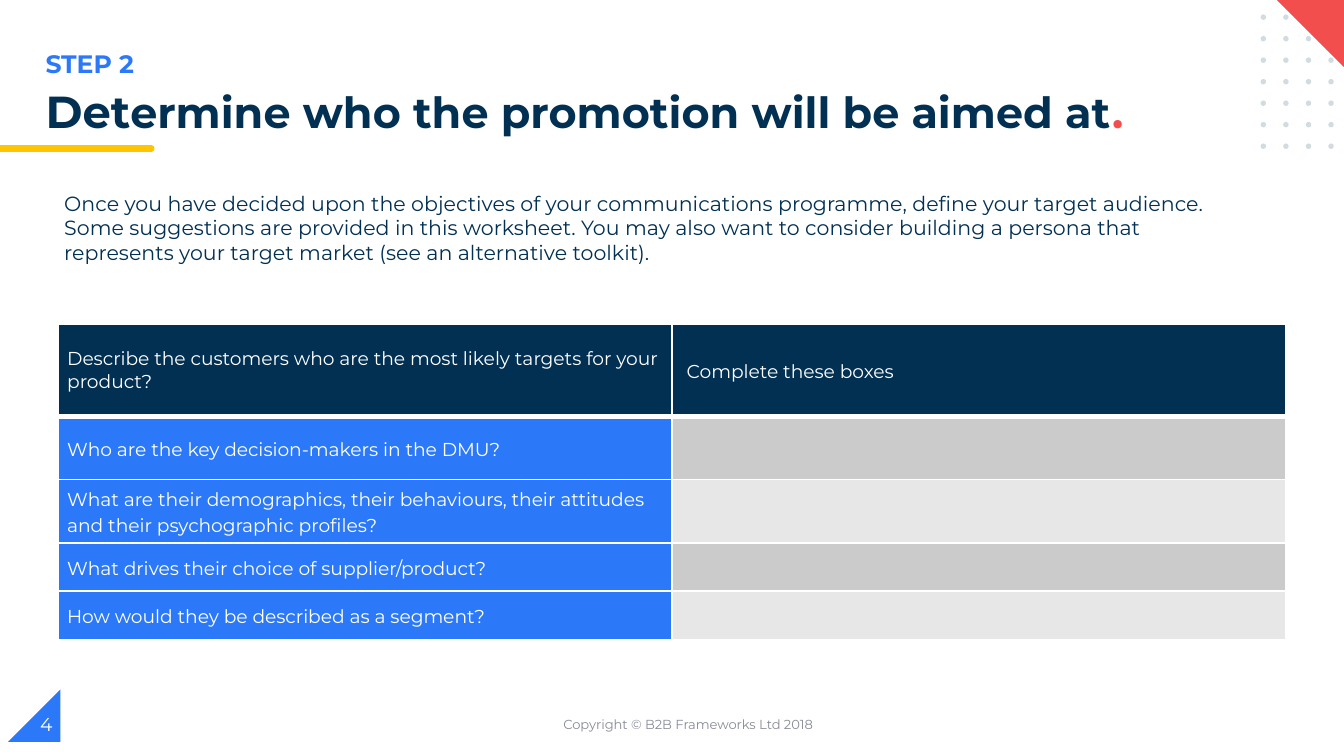
from dataclasses import dataclass

from pptx import Presentation
from pptx import util as u
from pptx.dml import color
from pptx.enum import shapes, text
from pptx.oxml import ns, xmlchemy

COLUMNS, ROWS = 100, 56.25  # grid of tenth-inch squares


@dataclass(frozen=True)
class Theme:
    font: str = "Montserrat"
    navy: str = "023053"
    blue: str = "2B79F8"
    red: str = "F24E4E"
    yellow: str = "FFC600"
    white: str = "FFFFFF"
    dot: str = "D1DBE0"
    muted: str = "888C97"
    bands: tuple = ("CBCBCB", "E7E7E7")
    step: float = 13.5
    title_first: float = 24
    title: float = 23
    body: float = 11
    cell: float = 10
    footer: float = 7


class Worksheet:
    def __init__(self, theme):
        self.theme = theme
        self.deck = Presentation()
        self.deck.slide_width, self.deck.slide_height = u.Inches(10), u.Inches(5.625)
        self.page = self.deck.slides.add_slide(self.deck.slide_layouts[6])

    def across(self, columns):
        return round(self.deck.slide_width * columns / COLUMNS)

    def down(self, rows):
        return round(self.deck.slide_height * rows / ROWS)

    def area(self, left, top, width, height):
        return self.across(left), self.down(top), self.across(width), self.down(height)

    def shape(self, kind, place, fill, rotation=0, mirrored=False):
        shape = self.page.shapes.add_shape(kind, *self.area(*place))
        shape.shadow.inherit = False
        shape.fill.solid()
        shape.fill.fore_color.rgb = color.RGBColor.from_string(fill)
        shape.line.fill.background()
        shape.rotation = rotation
        if mirrored:
            shape.element.spPr.find(ns.qn("a:xfrm")).set("flipH", "1")

    def add_spans(self, para, spans):
        for words, size, tint, bold in spans:
            span = para.add_run()
            span.text = words
            span.font.name = self.theme.font
            span.font.size = u.Pt(size)
            span.font.bold = bold
            span.font.color.rgb = color.RGBColor.from_string(tint)

    def text(self, place, spans, anchor=text.MSO_ANCHOR.TOP, align=text.PP_ALIGN.LEFT, spacing=1):
        frame = self.page.shapes.add_textbox(*self.area(*place)).text_frame
        frame.word_wrap = True
        frame.vertical_anchor = anchor
        para = frame.paragraphs[0]
        para.alignment = align
        para.line_spacing = spacing
        self.add_spans(para, spans)

    def border(self, cell, top, bottom):
        properties = cell._tc.get_or_add_tcPr()
        for position, (side, points) in enumerate((("L", 1), ("R", 1), ("T", top), ("B", bottom))):
            line = xmlchemy.OxmlElement(f"a:ln{side}")
            line.set("w", str(u.Pt(points)))
            fill = xmlchemy.OxmlElement("a:solidFill")
            tint = xmlchemy.OxmlElement("a:srgbClr")
            tint.set("val", self.theme.white)
            fill.append(tint)
            line.append(fill)
            properties.insert(position, line)

    def cell(self, cell, words, fill, spacing, indent=0.7, top=1, bottom=1):
        cell.fill.solid()
        cell.fill.fore_color.rgb = color.RGBColor.from_string(fill)
        cell.margin_left, cell.margin_right = self.across(indent), self.across(0.7)
        cell.margin_top = cell.margin_bottom = 0
        cell.vertical_anchor = text.MSO_ANCHOR.MIDDLE
        para = cell.text_frame.paragraphs[0]
        para.line_spacing = spacing
        if words:
            self.add_spans(para, [(words, self.theme.cell, self.theme.white, False)])
        else:
            para.font.size = u.Pt(self.theme.cell)
        self.border(cell, top, bottom)

    def table(self, left, top, width, headings, questions, heights):
        place = self.area(left, top, width, sum(heights))
        table = self.page.shapes.add_table(len(heights), 2, *place).table
        for column in table.columns:
            column.width = self.across(width / 2)
        for row, height in zip(table.rows, heights):
            row.height = self.down(height)
        self.cell(table.cell(0, 0), headings[0], self.theme.navy, 1, bottom=3)
        self.cell(table.cell(0, 1), headings[1], self.theme.navy, 1.15, indent=1.1, bottom=3)
        for number, question in enumerate(questions, 1):
            rule = 3 if number == 1 else 1
            band = self.theme.bands[(number - 1) % 2]
            self.cell(table.cell(number, 0), question, self.theme.blue, 1.15, top=rule)
            self.cell(table.cell(number, 1), "", band, 1.15, top=rule)


def main():
    theme = Theme()
    sheet = Worksheet(theme)
    kind = shapes.MSO_SHAPE
    middle = text.MSO_ANCHOR.MIDDLE

    # Page-number corner and title underline
    sheet.shape(kind.RIGHT_TRIANGLE, (0.6, 51.3, 3.9, 3.9), theme.blue, mirrored=True)
    sheet.shape(kind.FLOWCHART_TERMINATOR, (10.1, 10.8, 1.4, 0.5), theme.yellow)
    sheet.shape(kind.RECTANGLE, (0, 10.8, 10.6, 0.5), theme.yellow)

    # Dot pattern under the red corner
    for row in range(7):
        for column in range(4):
            place = (93.8 + 1.68 * column, 1.08 + 1.6 * row, 0.4, 0.4)
            sheet.shape(kind.OVAL, place, theme.dot)
    sheet.shape(kind.RIGHT_TRIANGLE, (94.9, -0.1, 5.4, 5.4), theme.red, rotation=180)

    # Step label, title and introduction
    sheet.text((2.4, 3.1, 50.2, 3.3), [("STEP 2", theme.step, theme.blue, True)])
    sheet.text((2.4, 6.2, 88.9, 4.2), [
        ("Det", theme.title_first, theme.navy, True),
        ("ermine who the promotion will be aimed at", theme.title, theme.navy, True),
        (".", theme.title, theme.red, True),
    ], spacing=0.9)
    sheet.text((3.8, 13.7, 89.3, 6.6), [(
        "Once you have decided upon the objectives of your communications programme, "
        "define your target audience. Some suggestions are provided in this worksheet. "
        "You may also want to consider building a persona that represents your target "
        "market (see an alternative toolkit).", theme.body, theme.navy, False)])

    # Worksheet table
    sheet.table(
        4.3, 24.1, 91.4,
        ("Describe the customers who are the most likely targets for your product?",
         "Complete these boxes"),
        ("Who are the key decision-makers in the DMU?",
         "What are their demographics, their behaviours, their attitudes "
         "and their psychographic profiles?",
         "What drives their choice of supplier/product?",
         "How would they be described as a segment?"),
        (6.9, 4.7, 4.7, 3.6, 3.6))

    # Footer
    sheet.text((28.7, 51.9, 45, 4), [
        ("Copyright © B2B Frameworks Ltd 2018", theme.footer, theme.muted, False)],
        middle, text.PP_ALIGN.CENTER)
    sheet.text((2, 51.9, 30, 4), [("4", theme.cell, theme.white, False)], middle)

    sheet.deck.save("out.pptx")


if __name__ == "__main__":
    main()
